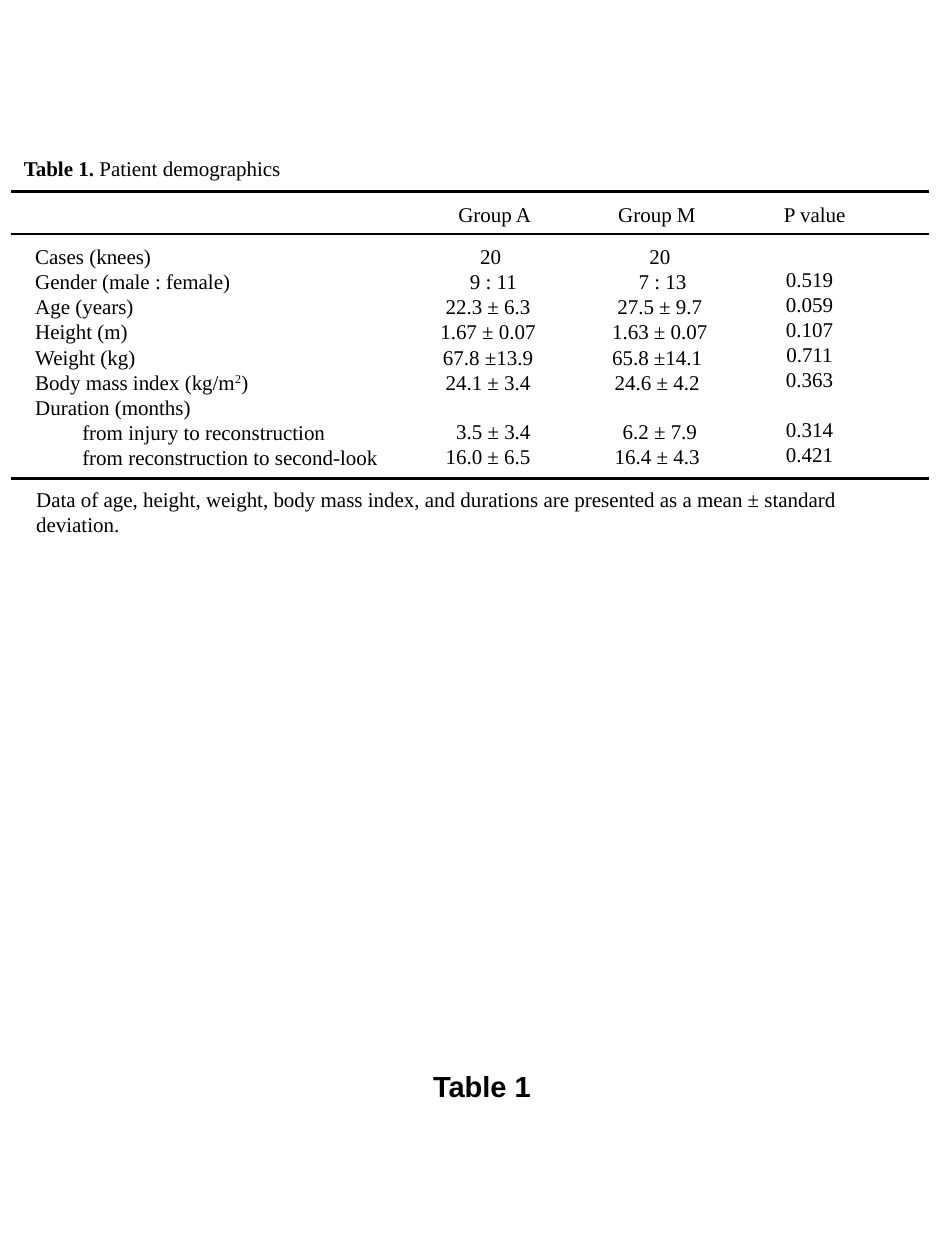
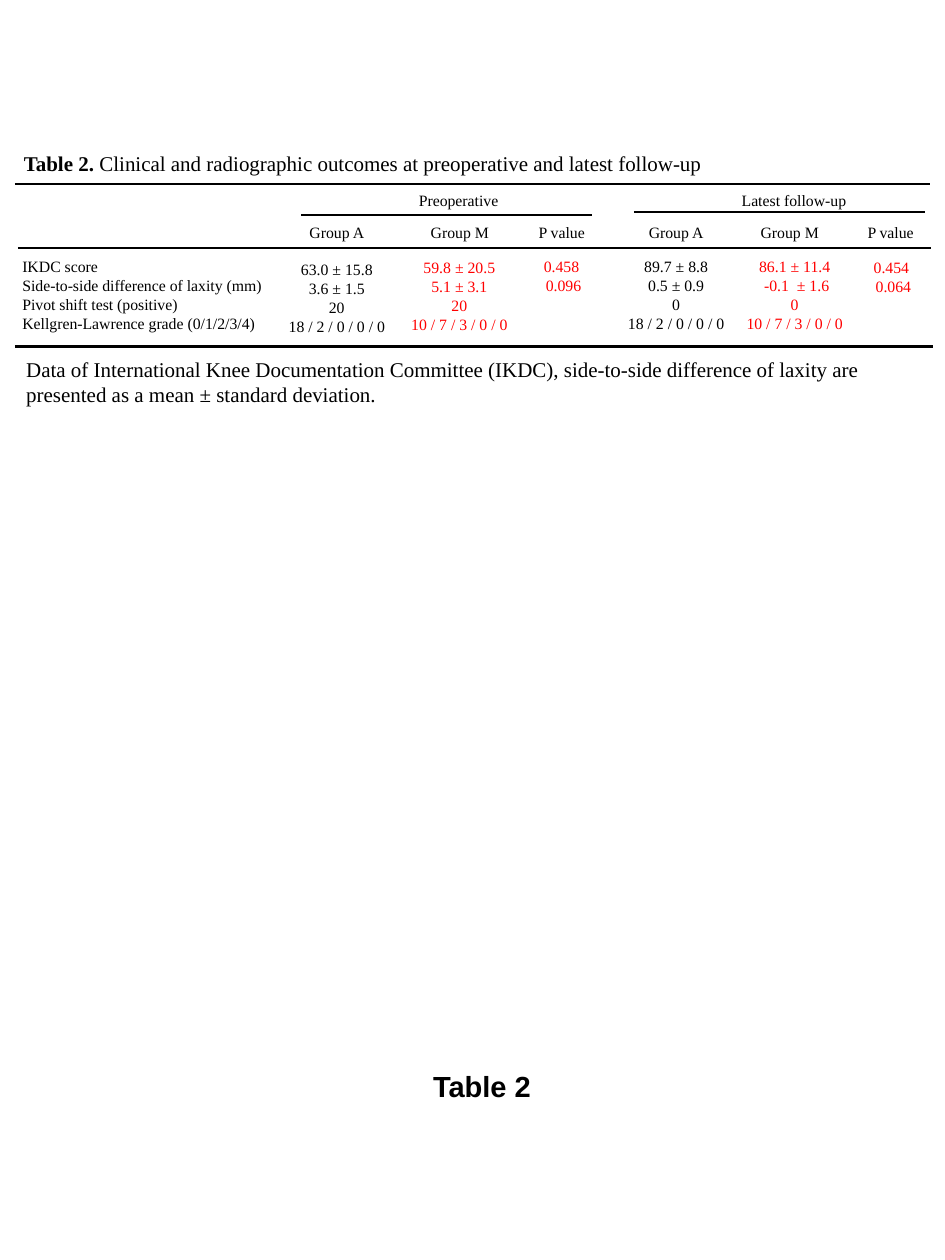
from dataclasses import dataclass

from lxml import etree
from pptx import Presentation
from pptx import util as u
from pptx.dml.color import RGBColor
from pptx.enum import shapes, text
from pptx.oxml import ns

Cm, Pt = u.Cm, u.Pt
LEFT, CENTER, JUSTIFY = (
    text.PP_ALIGN.LEFT, text.PP_ALIGN.CENTER, text.PP_ALIGN.JUSTIFY)


@dataclass(frozen=True)
class Theme:
    black: RGBColor = RGBColor(0, 0, 0)
    red: RGBColor = RGBColor(255, 0, 0)
    serif: str = "Times New Roman"
    sans: str = "Arial"
    body: float = 12
    small: float = 9
    caption: float = 16.6
    thick: float = 1.5
    thin: float = 1
    line_height: float = 1.15


@dataclass(frozen=True)
class Entry:
    """A line of a column, moved right by an indent."""
    words: str
    indent: u.Length = Pt(0)


class TablePages:
    def __init__(self, theme):
        self.theme = theme
        self.deck = Presentation()
        self.deck.slide_width, self.deck.slide_height = Cm(19.05), Cm(25.4)
        self.page = None

    def add_page(self):
        self.page = self.deck.slides.add_slide(self.deck.slide_layouts[6])

    def rule(self, left, right, top, weight):
        line = self.page.shapes.add_connector(
            shapes.MSO_CONNECTOR.STRAIGHT, Cm(left), Cm(top), Cm(right), Cm(top))
        line.line.color.rgb = self.theme.black
        line.line.width = Pt(weight)
        etree.SubElement(line._element.spPr, ns.qn("a:effectLst"))

    def column(self, entries, left, top, width, height, size=None, color=None,
               align=CENTER, font=None, bold=False, wrap=True, spacing=None):
        """Write one paragraph per entry; None leaves a row open."""
        size = size or self.theme.body
        box = self.page.shapes.add_textbox(Cm(left), Cm(top), Cm(width), Cm(height))
        frame = box.text_frame
        frame.word_wrap = wrap
        frame.auto_size = text.MSO_AUTO_SIZE.SHAPE_TO_FIT_TEXT
        para, gap = None, 0
        for entry in entries:
            if entry is None:
                gap += size * self.theme.line_height
                continue
            if not isinstance(entry, Entry):
                entry = Entry(entry)
            para = frame.add_paragraph() if para else frame.paragraphs[0]
            para.alignment = align
            if gap:
                para.space_before, gap = Pt(gap), 0
            if spacing:
                para.line_spacing = Pt(spacing)
            if entry.indent:
                para._p.get_or_add_pPr().set("marL", str(int(entry.indent)))
            para.font.name = font or self.theme.serif
            para.font.size = Pt(size)
            para.font.bold = bold
            para.font.color.rgb = color or self.theme.black
            para.add_run().text = entry.words
        return frame

    def title(self, number, words, top):
        frame = self.column([f"Table {number}."], 0.23, top, 17.1, 0.76, align=LEFT)
        para = frame.paragraphs[0]
        para.runs[0].font.bold = True
        para.add_run().text = f" {words}"

    def note(self, words, left, top):
        self.column([words], left, top, 18.26, 1.27, align=LEFT)

    def caption(self, number):
        self.column([f"Table {number}"], 8.48, 21.41, 2.51, 0.97,
                    size=self.theme.caption, align=LEFT, font=self.theme.sans,
                    bold=True, wrap=False)

    def small_head(self, words, left, top, width):
        self.column([words], left, top, width, 0.66, size=self.theme.small, spacing=12)


def add_demographics(pages):
    theme = pages.theme
    pages.add_page()
    pages.title(1, "Patient demographics", 3.02)
    for top in (3.86, 4.72, 9.65):
        pages.rule(0.23, 18.72, top, theme.thick)
    for words, left in (("Group A", 8.26), ("Group M", 11.53), ("P value", 14.71)):
        pages.column([words], left, 3.94, 3.43, 0.76)

    step = Cm(0.95)
    labels = pages.column(
        ["Cases (knees)", "Gender (male : female)", "Age (years)", "Height (m)",
         "Weight (kg)", "Body mass index (kg/m", "Duration (months)",
         Entry("from injury to reconstruction", step),
         Entry("from reconstruction to second-look", step)],
        0.46, 4.78, 10.26, 4.88, align=JUSTIFY)
    mass_index = labels.paragraphs[5]
    power = mass_index.add_run()
    power.text = "2"
    power._r.get_or_add_rPr().set("baseline", "30000")
    mass_index.add_run().text = ")"

    one, two = Pt(3), Pt(6)
    group_a = [Entry("20", one), Entry("9 : 11", two), "22.3 ± 6.3", "1.67 ± 0.07",
               "67.8 ±13.9", "24.1 ± 3.4", None, Entry("3.5 ± 3.4", two), "16.0 ± 6.5"]
    group_m = [Entry("20", one), Entry("7 : 13", two), Entry("27.5 ± 9.7", one),
               Entry("1.63 ± 0.07", one), "65.8 ±14.1", "24.6 ± 4.2", None,
               Entry("6.2 ± 7.9", one), "16.4 ± 4.3"]
    p_values = ["0.519", "0.059", "0.107", "0.711", "0.363", None, "0.314", "0.421"]
    pages.column(group_a, 8.48, 4.78, 2.72, 4.88)
    pages.column(group_m, 11.89, 4.78, 2.72, 4.88)
    pages.column(p_values, 14.96, 5.24, 2.72, 4.39)
    pages.note("Data of age, height, weight, body mass index, and durations are "
               "presented as a mean ± standard deviation.", 0.48, 9.68)
    pages.caption(1)


def add_outcomes(pages):
    theme = pages.theme
    pages.add_page()
    pages.title(2, "Clinical and radiographic outcomes at preoperative "
                   "and latest follow-up", 2.92)
    pages.rule(0.3, 18.75, 3.71, theme.thin)
    pages.rule(0.36, 18.77, 5, theme.thin)
    pages.rule(0.3, 18.8, 6.99, theme.thick)

    for words, left, start, top in (("Preoperative", 7.49, 6.07, 4.34),
                                    ("Latest follow-up", 14.25, 12.78, 4.27)):
        pages.small_head(words, left, 3.68, 3.51)
        pages.rule(start, start + 5.87, top, theme.thin)
    for words, width, lefts in (("Group A", 1.8, (5.89, 12.73)),
                                ("Group M", 2.18, (8.18, 14.83)),
                                ("P value", 2.03, (10.31, 16.94))):
        for left in lefts:
            pages.small_head(words, left, 4.32, width)

    pages.column(["IKDC score", "Side-to-side difference of laxity (mm)",
                  "Pivot shift test (positive)", "Kellgren-Lawrence grade (0/1/2/3/4)"],
                 0.2, 5.05, 5.77, 1.8, size=theme.small, align=JUSTIFY)

    grades_a, grades_m = "18 / 2 / 0 / 0 / 0", "10 / 7 / 3 / 0 / 0"
    shift = Pt(2.25)
    for left, top, entries in (
            (5.56, 5.11, ["63.0 ± 15.8", "3.6 ± 1.5", "20", grades_a]),
            (12.4, 5.05, ["89.7 ± 8.8", "0.5 ± 0.9", "0", grades_a])):
        pages.column(entries, left, top, 2.46, 1.8, size=theme.small, wrap=False)
    for left, top, entries in (
            (7.9, 5.08, ["59.8 ± 20.5", "5.1 ± 3.1", "20", grades_m]),
            (9.96, 5.05, ["0.458", Entry("0.096", shift)]),
            (14.66, 5.05, ["86.1 ± 11.4", Entry("-0.1  ± 1.6", shift), "0", grades_m]),
            (16.61, 5.08, ["0.454", Entry("0.064", shift)])):
        pages.column(entries, left, top, 2.72, 0.25 + 0.39 * len(entries),
                     size=theme.small, color=theme.red)
    pages.note("Data of International Knee Documentation Committee (IKDC), "
               "side-to-side difference of laxity are presented as a mean ± "
               "standard deviation.", 0.28, 7.06)
    pages.caption(2)


def main():
    pages = TablePages(Theme())
    add_demographics(pages)
    add_outcomes(pages)
    pages.deck.save("out.pptx")


if __name__ == "__main__":
    main()
